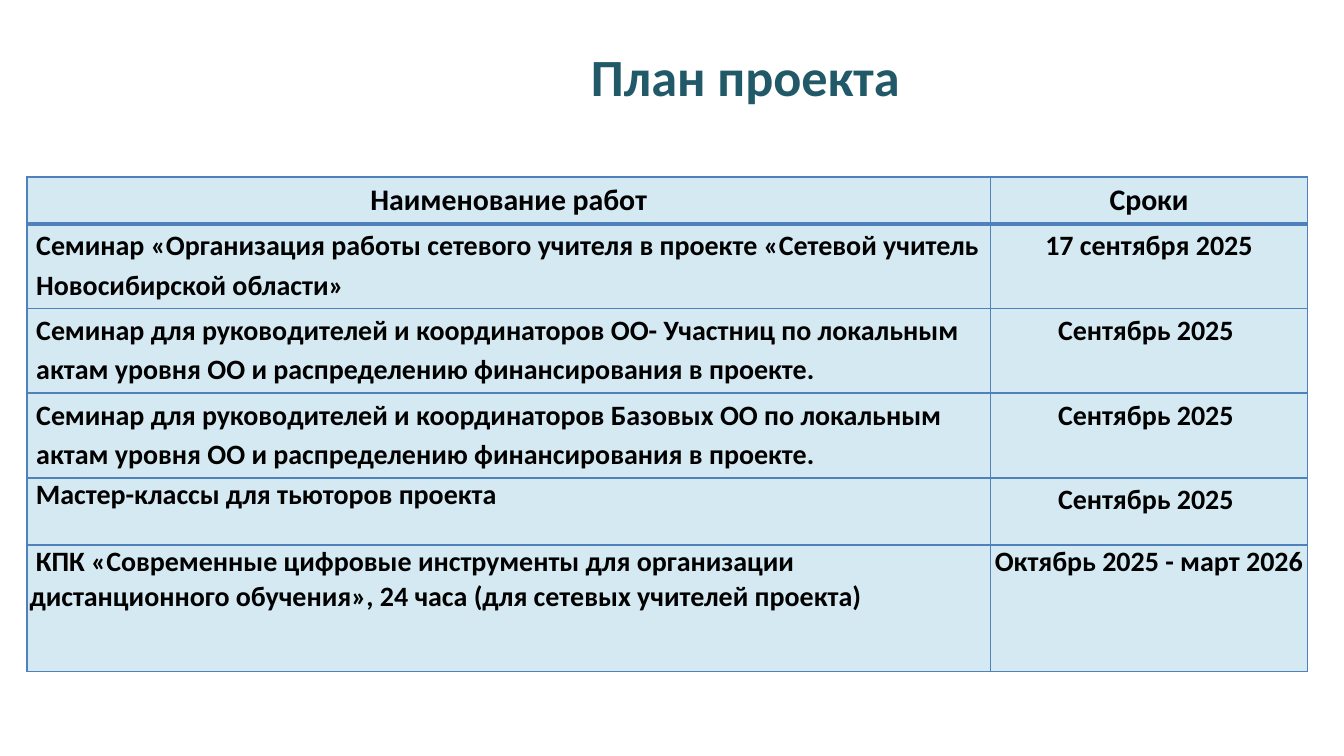
from lxml import etree
from pptx import Presentation
from pptx import util as u
from pptx.dml.color import RGBColor
from pptx.enum import text
from pptx.oxml.ns import qn

ALIGN = text.PP_ALIGN


def rgb(value):
    return RGBColor.from_string(value)


class Deck:
    font = "Calibri"
    title_color, ink, fill, line = "215968", "000000", "D4E9F1", "4F81BD"

    def __init__(self, width, ratio):
        self.prs = Presentation()
        self.prs.slide_width = u.Inches(width)
        self.prs.slide_height = u.Inches(width / ratio)
        self.s = self.prs.slides.add_slide(self.prs.slide_layouts[5])

    def box(self, x, y, w, h):
        width, height = self.prs.slide_width, self.prs.slide_height
        return [int(v) for v in (x * width, y * height, w * width, h * height)]

    def style(self, p, size, color, align, spacing=1.0, left=0, first=0):
        p.alignment, p.line_spacing = align, spacing
        pPr = p._p.get_or_add_pPr()
        pPr.set("marL", str(u.Inches(left)))
        pPr.set("indent", str(u.Inches(first)))
        p.font.name, p.font.size, p.font.bold = self.font, u.Pt(size), True
        p.font.color.rgb = rgb(color)

    def title(self, words, *share):
        sp = self.s.shapes.title
        sp.left, sp.top, sp.width, sp.height = self.box(*share)
        tf = sp.text_frame
        tf.text, tf.word_wrap = words, True
        tf.auto_size = text.MSO_AUTO_SIZE.SHAPE_TO_FIT_TEXT
        self.style(tf.paragraphs[0], 28, self.title_color, ALIGN.CENTER, first=0.49)

    def borders(self, cell, bottom):
        tcPr = cell._tc.get_or_add_tcPr()
        for side, width in (("L", 1), ("R", 1), ("T", 1), ("B", bottom)):
            ln = etree.SubElement(tcPr, qn(f"a:ln{side}"), w=str(u.Pt(width)))
            solid = etree.SubElement(ln, qn("a:solidFill"))
            etree.SubElement(solid, qn("a:srgbClr"), val=self.line)

    def cell(self, cell, words, bottom=1, **style):
        cell.margin_left = cell.margin_right = u.Inches(0.02)
        cell.margin_top = cell.margin_bottom = 0
        self.borders(cell, bottom)
        cell.fill.solid()
        cell.fill.fore_color.rgb = rgb(self.fill)
        cell.text = words
        self.style(cell.text_frame.paragraphs[0], color=self.ink, **style)

    def table(self, header, rows, widths, heights, *share):
        frame = self.s.shapes.add_table(len(heights), len(widths), *self.box(*share))
        table = frame.table
        table.horz_banding = False
        for column, width in zip(table.columns, widths):
            column.width = u.Inches(width)
        for row, height in zip(table.rows, heights):
            row.height = u.Inches(height)
        for c, words in enumerate(header):
            self.cell(table.cell(0, c), words, 2, size=16, align=ALIGN.CENTER, spacing=1.15)
        for r, (work, date, work_style, date_spacing) in enumerate(rows, 1):
            self.cell(table.cell(r, 0), work, size=15, **work_style)
            self.cell(table.cell(r, 1), date, size=15, align=ALIGN.CENTER, spacing=date_spacing)


def main():
    seminar = dict(align=ALIGN.LEFT, spacing=1.15, left=0.05)
    classes = dict(align=ALIGN.JUSTIFY)
    course = dict(align=ALIGN.LEFT)
    september = "Сентябрь 2025 "
    acts = "по локальным актам уровня ОО и распределению финансирования в проекте."
    leaders = "Семинар для руководителей и координаторов"
    rows = [
        ("Семинар «Организация работы сетевого учителя в проекте «Сетевой учитель "
         "Новосибирской области»", "17 сентября 2025", seminar, 1.15),
        (f"{leaders} ОО- Участниц {acts}", september, seminar, 1.15),
        (f"{leaders} Базовых ОО {acts}", september, seminar, 1.15),
        (" Мастер-классы для тьюторов проекта", september, classes, 1.15),
        (" КПК «Современные цифровые инструменты для организации дистанционного "
         "обучения», 24 часа (для сетевых учителей проекта)",
         "Октябрь 2025 - март 2026", course, 1.0),
    ]
    deck = Deck(10, 16 / 9)
    deck.title("План проекта", 0.2, 0.05, 0.66, 0.1)
    deck.table(("Наименование работ", "Сроки"), rows, (7.17, 2.36),
               (0.35, 0.63, 0.63, 0.63, 0.5, 0.94), 0.02, 0.234, 0.95, 0.66)
    deck.prs.save("out.pptx")


if __name__ == "__main__":
    main()
